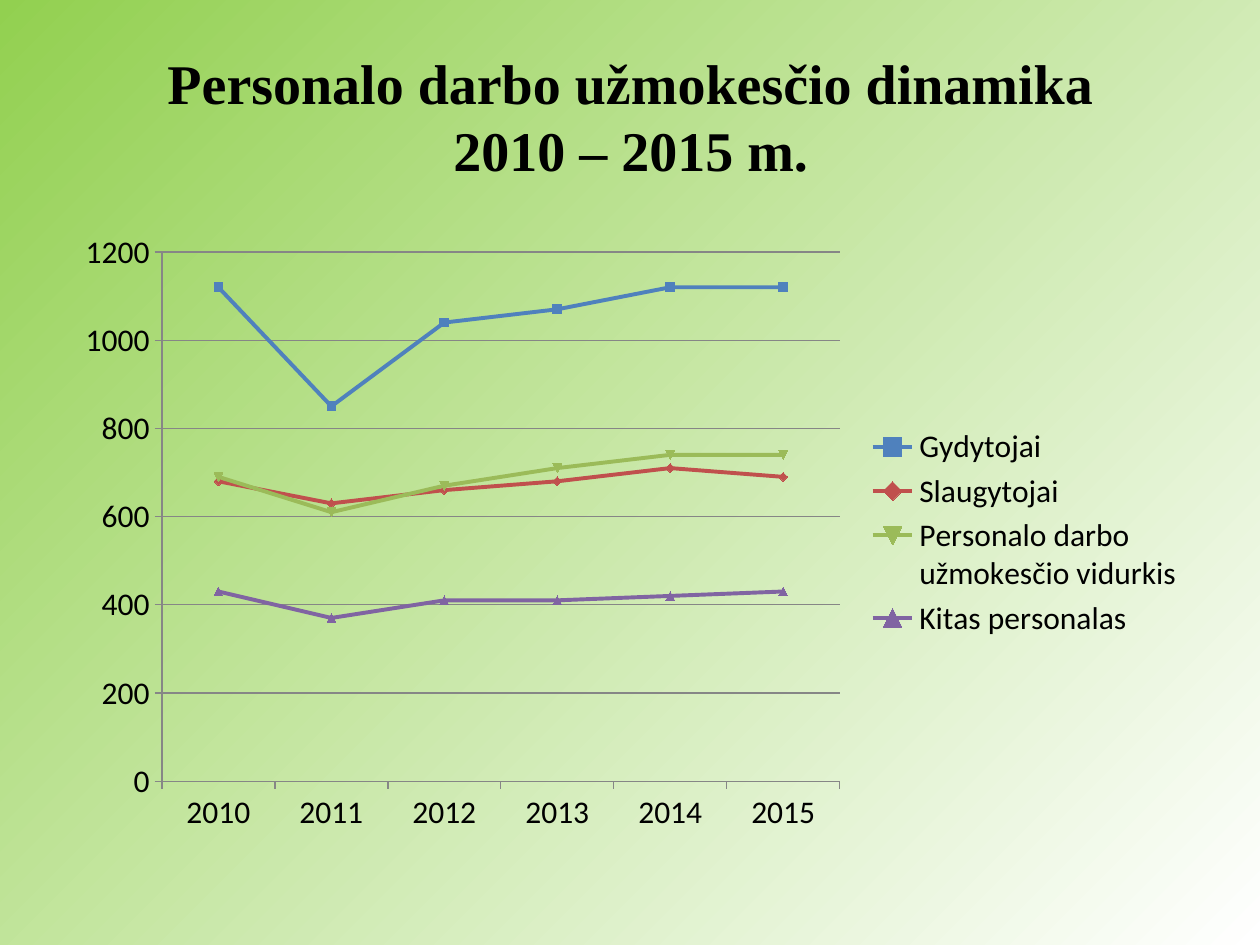
from pptx import Presentation
from pptx.chart.data import CategoryChartData
from pptx.dml.color import RGBColor
from pptx.enum.chart import XL_CHART_TYPE, XL_LEGEND_POSITION, XL_TICK_MARK
from pptx.enum.text import MSO_ANCHOR, PP_ALIGN
from pptx.util import Pt

LINE = XL_CHART_TYPE.LINE_MARKERS
RIGHT = XL_LEGEND_POSITION.RIGHT
OUT = XL_TICK_MARK.OUTSIDE
MIDDLE = MSO_ANCHOR.MIDDLE
CENTER = PP_ALIGN.CENTER

COLORS = {
    "text": "000000", "axis": "868686", "green": "92D050", "white": "FFFFFF",
    "Gydytojai": "4F81BD",
    "Slaugytojai": "C0504D",
    "Personalo darbo užmokesčio vidurkis": "9BBB59",
    "Kitas personalas": "8064A2",
}
YEARS = [str(year) for year in range(2010, 2016)]
WAGES = {
    "Gydytojai": (1120, 850, 1040, 1070, 1120, 1120),
    "Slaugytojai": (680, 630, 660, 680, 710, 690),
    "Personalo darbo užmokesčio vidurkis": (690, 610, 670, 710, 740, 740),
    "Kitas personalas": (430, 370, 410, 410, 420, 430),
}


def color(name):
    return RGBColor.from_string(COLORS[name])


def set_font(font, **values):
    for key, value in values.items():
        setattr(font, key, value)
    font.color.rgb = color("text")


def set_line(line, name, width):
    line.color.rgb = color(name)
    line.width = Pt(width)


def add_back(slide):
    """Fill the background from the top left to the bottom right corner."""
    fill = slide.background.fill
    fill.gradient()
    fill.gradient_angle = 315
    for stop, name in zip(fill.gradient_stops, ("green", "white")):
        stop.color.rgb = color(name)


def add_title(slide, text, box):
    frame = slide.shapes.add_textbox(*map(Pt, box)).text_frame
    frame.word_wrap = True
    frame.vertical_anchor = MIDDLE
    para = frame.paragraphs[0]
    para.text = text
    para.alignment = CENTER
    for run in para.runs:
        set_font(run.font, name="Times New Roman", size=Pt(32), bold=True)


def style_axes(chart):
    for axis in (chart.category_axis, chart.value_axis):
        axis.major_tick_mark = OUT
        set_line(axis.format.line, "axis", 0.75)
    axis = chart.value_axis
    axis.minimum_scale, axis.maximum_scale, axis.major_unit = 0, 1200, 200
    set_line(axis.major_gridlines.format.line, "axis", 0.75)


def style_lines(chart):
    for line in chart.plots[0].series:
        line.smooth = False
        set_line(line.format.line, line.name, 2.25)
        mark = line.marker
        mark.size = 5
        mark.format.fill.solid()
        mark.format.fill.fore_color.rgb = color(line.name)
        set_line(mark.format.line, line.name, 0.75)


def add_graph(slide, box):
    data = CategoryChartData()
    data.categories = YEARS
    for name, values in WAGES.items():
        data.add_series(name, values)
    chart = slide.shapes.add_chart(LINE, *map(Pt, box), data).chart
    set_font(chart.font, name="Calibri", size=Pt(18))
    chart.has_title = False
    chart.has_legend = True
    chart.legend.position = RIGHT
    chart.legend.include_in_layout = False
    chart.plots[0].vary_by_categories = False
    style_axes(chart)
    style_lines(chart)


def main():
    deck = Presentation()
    deck.slide_width, deck.slide_height = Pt(720), Pt(540)
    slide = deck.slides.add_slide(deck.slide_layouts[6])
    add_back(slide)
    add_title(slide, "Personalo darbo užmokesčio dinamika\v2010 – 2015 m.",
              (36.5, 21, 648, 90))
    add_graph(slide, (36, 126, 648, 356.4))
    deck.save("out.pptx")


if __name__ == "__main__":
    main()
